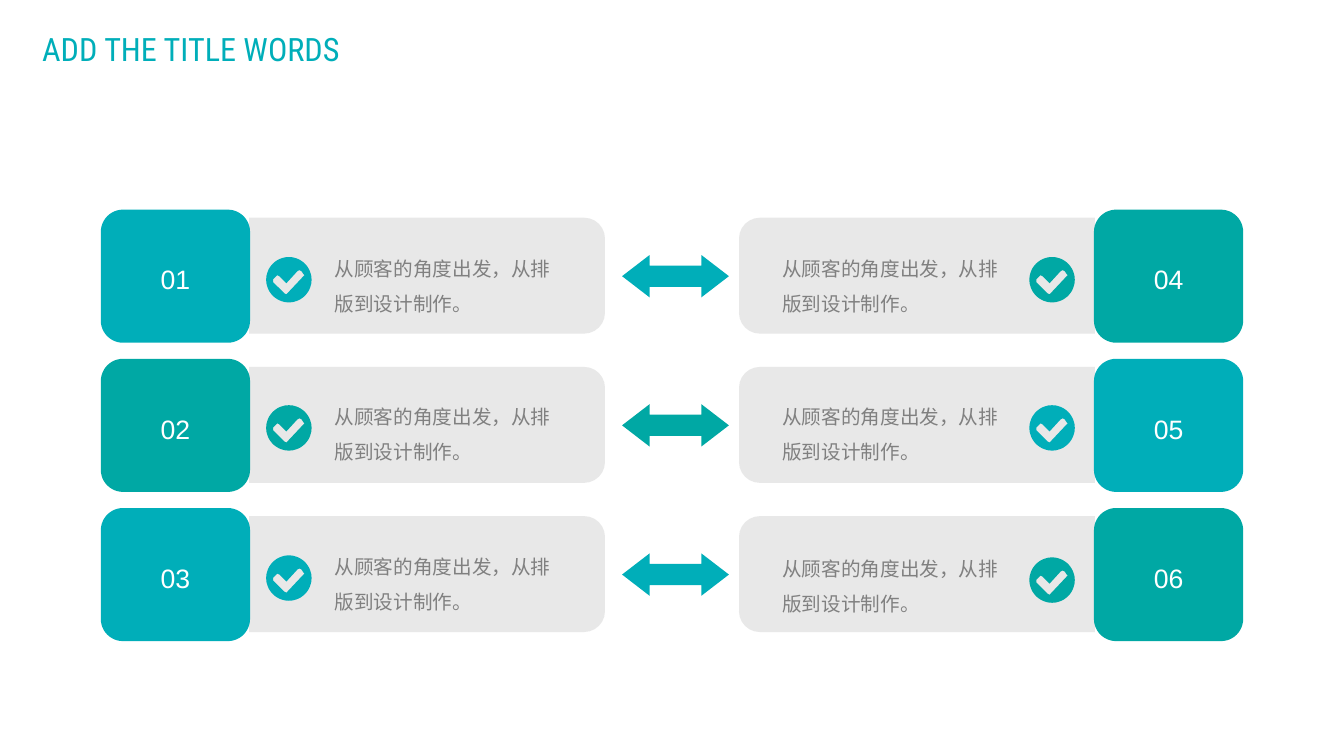
from dataclasses import dataclass
from math import cos, pi, sin

from lxml import etree
from pptx import Presentation
from pptx.dml.color import RGBColor
from pptx.enum.shapes import MSO_SHAPE
from pptx.enum.text import MSO_ANCHOR, MSO_AUTO_SIZE, PP_ALIGN
from pptx.oxml.ns import qn
from pptx.util import Pt

ROUND_RECT = MSO_SHAPE.ROUNDED_RECTANGLE
HALF_ROUND = MSO_SHAPE.ROUND_2_SAME_RECTANGLE
DOUBLE_ARROW = MSO_SHAPE.LEFT_RIGHT_ARROW
MIDDLE, CENTER = MSO_ANCHOR.MIDDLE, PP_ALIGN.CENTER
FIT_SHAPE = MSO_AUTO_SIZE.SHAPE_TO_FIT_TEXT

PX = 9144  # EMU per px, 100 px to the inch
CYAN, TEAL, GREY, TEXT_GREY, WHITE = "00AEB9", "00A8A4", "E6E6E6", "808080", "FFFFFF"
BODY = "从顾客的角度出发，从排版到设计制作。"

# Rows
TOP, PITCH = 208, 148
CARD_W, CARD_H = 148, 132
BAR_W, BAR_H = 353, 115
ICON_D = 45
TICK = [(37, 17), (35, 14), (33, 13), (31, 14), (20, 26), (13, 19), (11, 18), (10, 19),
        (7, 22), (7, 25), (18, 36), (20, 37), (21, 36), (37, 19), (38, 18)]


@dataclass
class Side:
    card_x: int
    bar_x: int
    bar_turn: int
    icon_x: int
    text_x: int


@dataclass
class Item:
    number: str
    side: Side
    row: int
    color: str
    drop: int = 0  # shift of icon and text


LEFT = Side(100, 247, 90, 264, 322)
RIGHT = Side(1085, 733, -90, 1021, 766)
ITEMS = [
    Item("01", LEFT, 0, CYAN), Item("02", LEFT, 1, TEAL, -1), Item("03", LEFT, 2, CYAN),
    Item("04", RIGHT, 0, TEAL), Item("05", RIGHT, 1, CYAN, -1), Item("06", RIGHT, 2, TEAL, 2),
]
ARROW_COLORS = [CYAN, TEAL, CYAN]


def rgb(color: str) -> RGBColor:
    return RGBColor.from_string(color)


def paint(s, color: str) -> None:
    s.fill.solid()
    s.fill.fore_color.rgb = rgb(color)
    s.line.fill.background()
    s.shadow.inherit = False


def add_box(kind, x: int, y: int, w: int, h: int, color: str):
    s = sp.add_shape(kind, x * PX, y * PX, w * PX, h * PX)
    paint(s, color)
    return s


def write(tf, text: str, size: int, font: str, color: str, spacing: float):
    p = tf.paragraphs[0]
    p.add_run().text = text
    p.line_spacing = spacing
    p.font.size, p.font.name = Pt(size), font
    p.font.color.rgb = rgb(color)
    props = p._p.pPr.find(qn("a:defRPr"))
    etree.SubElement(props, qn("a:ea"), typeface=font)
    return p


def add_text(x: int, y: int, w: int, h: int, text: str, size: int, font: str, color: str) -> None:
    tf = sp.add_textbox(x * PX, y * PX, w * PX, h * PX).text_frame
    tf.word_wrap = True
    tf.auto_size = FIT_SHAPE
    write(tf, text, size, font, color, 1.5)


def add_bar(x: int, y: int, turn: int) -> None:
    # An upright shape turned about its centre, so its round end faces the arrow
    shift = (BAR_W - BAR_H) // 2
    s = add_box(HALF_ROUND, x + shift, y - shift, BAR_H, BAR_W, GREY)
    s.adjustments[0] = 0.18
    s.rotation = turn
    fill = s._element.spPr.find(qn("a:solidFill"))
    etree.SubElement(fill[0], qn("a:alpha"), val="90000")


def add_check(x: int, y: int, color: str) -> None:
    # A disc with the tick cut out of it, in tenths of a px
    r, steps = ICON_D * 5, 72
    disc = [(round(r + r * cos(2 * pi * i / steps)), round(r + r * sin(2 * pi * i / steps)))
            for i in range(steps)]
    tick = [(10 * a, 10 * b) for a, b in TICK]
    builder = sp.build_freeform(*disc[0], scale=PX / 10)
    builder.add_line_segments(disc[1:])
    builder.move_to(*tick[0])
    builder.add_line_segments(tick[1:])
    paint(builder.convert_to_shape(x * PX, y * PX), color)


def add_card(x: int, y: int, number: str, color: str) -> None:
    tf = add_box(ROUND_RECT, x, y, CARD_W, CARD_H, color).text_frame
    tf.margin_left = tf.margin_right = tf.margin_top = tf.margin_bottom = 0
    tf.vertical_anchor = MIDDLE
    write(tf, number, 19, "Arial", WHITE, 1.2).alignment = CENTER


def add_item(item: Item) -> None:
    side, y = item.side, TOP + item.row * PITCH
    add_bar(side.bar_x, y + 8, side.bar_turn)
    add_text(side.text_x, y + 30 + item.drop, 245, 77, BODY, 14, "Noto Sans CJK SC", TEXT_GREY)
    add_check(side.icon_x, y + 47 + item.drop, item.color)
    add_card(side.card_x, y, item.number, item.color)


prs = Presentation()
prs.slide_width, prs.slide_height = 1333 * PX, 750 * PX
sp = prs.slides.add_slide(prs.slide_layouts[6]).shapes

# Numbered items on both sides
for item in ITEMS:
    add_item(item)

# Arrows between the sides
for row, color in enumerate(ARROW_COLORS):
    arrow = add_box(DOUBLE_ARROW, 617, TOP + 45 + row * PITCH, 106, 42, color)
    arrow.adjustments[0], arrow.adjustments[1] = 0.5, 0.65

# Title
add_text(32, 5, 336, 68, "ADD THE TITLE WORDS", 23, "Roboto Condensed", CYAN)

prs.save("out.pptx")
